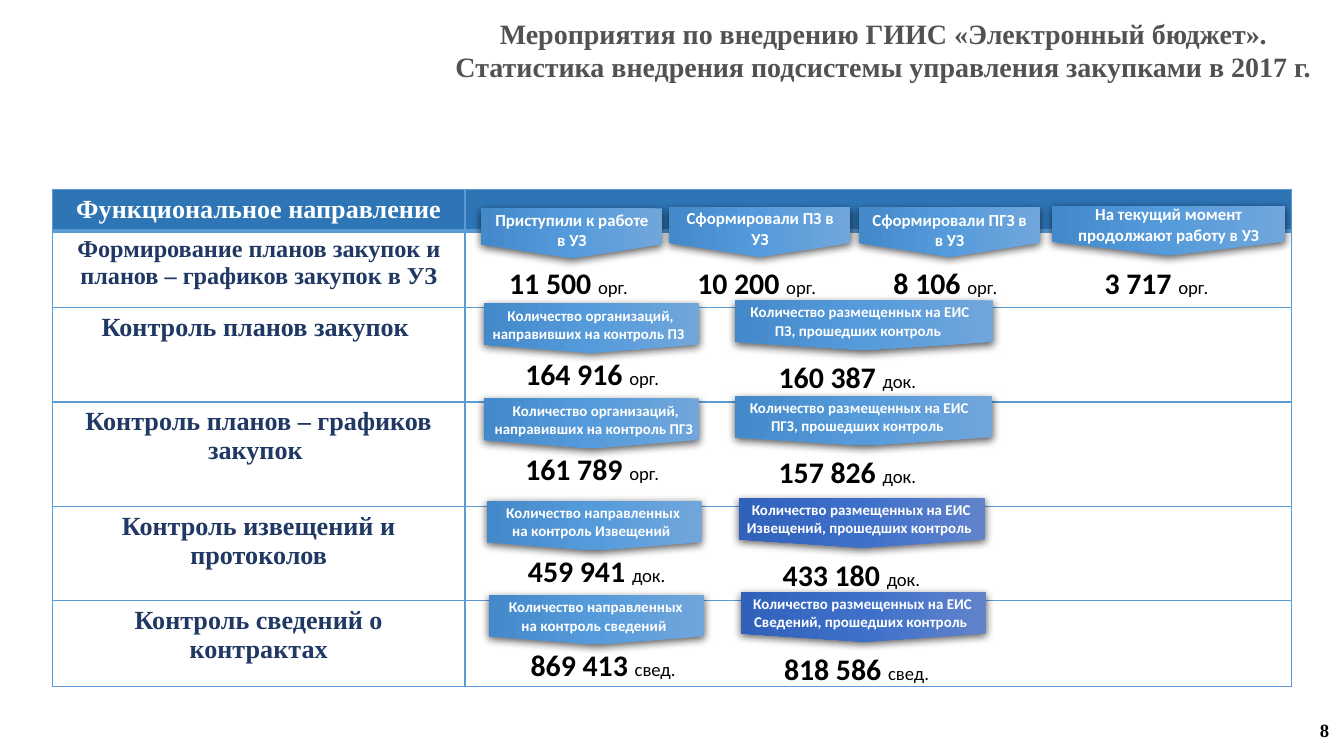
from lxml.etree import SubElement
from pptx import Presentation
from pptx.dml.color import RGBColor
from pptx.enum.shapes import MSO_SHAPE as SHAPE
from pptx.enum.text import MSO_ANCHOR as ANCHOR, MSO_AUTO_SIZE as AUTO, PP_ALIGN as ALIGN
from pptx.oxml import parse_xml
from pptx.oxml.ns import nsdecls, qn
from pptx.util import Inches, Pt

CELL = Inches(0.1)
COLS, ROWS = 100, 56.25
BANNER_H = 3.7
SERIF, SANS = "Times New Roman", "Calibri"

BLACK = RGBColor(0x00, 0x00, 0x00)
WHITE = RGBColor(0xFF, 0xFF, 0xFF)
GREY = RGBColor(0x52, 0x52, 0x52)
NAVY = RGBColor(0x20, 0x38, 0x64)
HEADER = RGBColor(0x2E, 0x75, 0xB6)
BORDER = RGBColor(0x5B, 0x9B, 0xD5)
LIGHT = RGBColor(0x71, 0xA6, 0xDB), RGBColor(0x55, 0x9B, 0xDB), RGBColor(0x44, 0x8A, 0xCA)
DEEP = RGBColor(0x61, 0x83, 0xCB), RGBColor(0x3E, 0x70, 0xCA), RGBColor(0x30, 0x62, 0xBB)

DIRECTIONS = [
    ("Функциональное направление", 3.1),
    ("Формирование планов закупок и планов – графиков закупок в УЗ", 5.7),
    ("Контроль планов закупок ", 7),
    ("Контроль планов – графиков закупок ", 7.8),
    ("Контроль извещений и протоколов", 7),
    ("Контроль сведений о контрактах", 6.4),
]
STAGES = [
    (35.8, 15.5, 13.5, 15.1, "Приступили к работе в УЗ", 36.9, "11 500 "),
    (49.8, 15.4, 13.5, 15, "Сформировали ПЗ в УЗ", 50.9, "10 200 "),
    (63.9, 15.4, 13.5, 15.1, "Сформировали ПГЗ в в УЗ", 65.5, "8 106 "),
    (78.3, 15.3, 17.3, 14.7, "На текущий момент продолжают работу в УЗ", 81.2, "3 717 "),
]
SENT = "Количество организаций, направивших на контроль "
DIRECTED = "Количество направленных на контроль "
PLACED = "Количество размещенных на ЕИС {}, прошедших контроль"
CONTROLS = [
    (22.55, (36, 16.5, SENT + "ПЗ", "164 916 ", "орг."),
     (54.7, 19.2, LIGHT, "ПЗ", "160 387 ", "док.")),
    (29.65, (36, 17.3, SENT + "ПГЗ", "161 789 ", "орг."),
     (54.7, 19.1, LIGHT, "ПГЗ", "157 826 ", "док.")),
    (37.25, (36.2, 16.5, DIRECTED + "Извещений", "459 941 ", "док."),
     (55, 18.3, DEEP, "Извещений", "433 180 ", "док.")),
    (44.25, (36.4, 16.5, DIRECTED + "сведений", "869 413 ", "свед."),
     (55.1, 18.3, DEEP, "Сведений", "818 586 ", "свед.")),
]


def grid(*cells):
    return [round(c * CELL) for c in cells]


def write(p, text, size=10, font=SANS, color=BLACK, bold=True, align=None):
    if align is not None:
        p.alignment = align
    r = p.add_run()
    r.text = text
    r.font.size, r.font.name, r.font.bold = Pt(size), font, bold
    r.font.color.rgb = color


def add_box(shapes, x, y, w, h, inset=(0.1, 0.05), fit=True):
    tf = shapes.add_textbox(*grid(x, y, w, h)).text_frame
    tf.word_wrap = True
    tf.auto_size = AUTO.SHAPE_TO_FIT_TEXT if fit else AUTO.NONE
    tf.margin_left = tf.margin_right = Inches(inset[0])
    tf.margin_top = tf.margin_bottom = Inches(inset[1])
    return tf


def add_banner(shapes, x, y, w, colors, tip):
    left = x + (w - BANNER_H) / 2
    top = y + (BANNER_H - w) / 2
    sp = shapes.add_shape(SHAPE.PENTAGON, *grid(left, top, BANNER_H, w))
    sp.rotation = 90
    sp.adjustments[0] = tip
    stops = "".join(
        f'<a:gs pos="{i * 50000}"><a:srgbClr val="{c}"/></a:gs>' for i, c in enumerate(colors))
    ns = nsdecls("a")
    for xml in (
        f'<a:gradFill {ns} rotWithShape="1"><a:gsLst>{stops}</a:gsLst>'
        '<a:lin ang="5400000" scaled="0"/></a:gradFill>',
        f'<a:ln {ns}><a:noFill/></a:ln>',
        f'<a:effectLst {ns}><a:outerShdw blurRad="{Pt(4.5)}" dist="{Pt(1.5)}" dir="5400000" '
        'algn="ctr" rotWithShape="0"><a:srgbClr val="000000"><a:alpha val="63000"/>'
        '</a:srgbClr></a:outerShdw></a:effectLst>',
    ):
        sp._element.spPr.append(parse_xml(xml))


def add_label(shapes, x, y, w, h, text, size, lead=""):
    p = add_box(shapes, x, y, w, h).paragraphs[0]
    if lead:
        write(p, lead, size=9, color=WHITE)
    write(p, text, size=size, color=WHITE, align=ALIGN.CENTER)


def add_value(shapes, x, y, w, number, unit):
    p = add_box(shapes, x, y, w, 3.7).paragraphs[0]
    write(p, number, size=16)
    write(p, unit, bold=False)


def set_border(cell, widths):
    tcPr = cell._tc.get_or_add_tcPr()
    for i, (side, width) in enumerate(widths.items()):
        tcPr.insert(i, parse_xml(
            f'<a:{side} {nsdecls("a")} w="{Pt(width)}"><a:solidFill>'
            f'<a:srgbClr val="{BORDER}"/></a:solidFill></a:{side}>'))


def add_directions(shapes):
    table = shapes.add_table(len(DIRECTIONS), 2, *grid(3.9, 14.1, 92.2, 37)).table
    table.horz_banding = False
    table.columns[0].width, table.columns[1].width = grid(30.7, 61.5)
    for i, (name, height) in enumerate(DIRECTIONS):
        table.rows[i].height = grid(height)[0]
        for cell in table.rows[i].cells:
            cell.margin_left = cell.margin_right = Inches(0.08)
            cell.margin_top = cell.margin_bottom = Inches(0.04)
            if i == 0:
                cell.fill.solid()
                cell.fill.fore_color.rgb = HEADER
            else:
                cell.fill.background()
            set_border(cell, {"lnL": 1, "lnR": 1, "lnT": 2 if i == 1 else 1,
                              "lnB": 2 if i == 0 else 1})
        write(table.cell(i, 0).text_frame.paragraphs[0], name, size=13 if i == 1 else 14,
              font=SERIF, color=NAVY if i else WHITE, align=ALIGN.CENTER)
        empty = table.cell(i, 1).text_frame.paragraphs[0]
        SubElement(empty._p, qn("a:endParaRPr")).set("sz", "1000")


def add_stage(shapes, x, y, w, label_y, text, value_x, number):
    group = shapes.add_group_shape().shapes
    add_banner(group, x, y, w, LIGHT, 0.278)
    add_label(group, x, label_y, w, 4, text, 9)
    add_value(shapes, value_x, 19.2, 11.4, number, "орг.")


def add_control(shapes, y, sent, placed):
    group = shapes.add_group_shape().shapes
    x, label_w, text, number, unit = sent
    add_banner(group, x, y, 16, LIGHT, 0.167)
    add_label(group, x - 0.45, y - 0.4, label_w, 3.9, text, 8, lead=" ")
    add_value(group, x + 2.1, y + 3.4, 15.2 if unit == "свед." else 12.8, number, unit)
    x, w, colors, subject, number, unit = placed
    add_banner(group, x, y - 0.2, w, colors, 0.167)
    label_w = 18.8 if colors is DEEP else w
    add_label(group, x - 0.45, y - 0.65, label_w, 3.9, PLACED.format(subject), 8, lead=" ")
    add_value(group, x + 2.25, y + 3.65, 14.5 if unit == "свед." else 12.8, number, unit)


def main():
    prs = Presentation()
    prs.slide_width, prs.slide_height = grid(COLS, ROWS)
    shapes = prs.slides.add_slide(prs.slide_layouts[6]).shapes
    tf = add_box(shapes, 77.1, 52.8, 22.5, 3, inset=(0.07, 0.04), fit=False)
    tf.vertical_anchor = ANCHOR.MIDDLE
    write(tf.paragraphs[0], "8", font=SERIF, align=ALIGN.RIGHT)
    add_directions(shapes)
    tf = add_box(shapes, 32.9, 0.8, 65.7, 5.8, inset=(0.07, 0.04))
    write(tf.paragraphs[0],
          "Мероприятия по внедрению ГИИС «Электронный бюджет». "
          "Статистика внедрения подсистемы управления закупками в 2017 г.",
          size=15, font=SERIF, color=GREY, align=ALIGN.CENTER)
    for stage in STAGES:
        add_stage(shapes, *stage)
    for control in CONTROLS:
        add_control(shapes, *control)
    prs.save("out.pptx")


if __name__ == "__main__":
    main()
